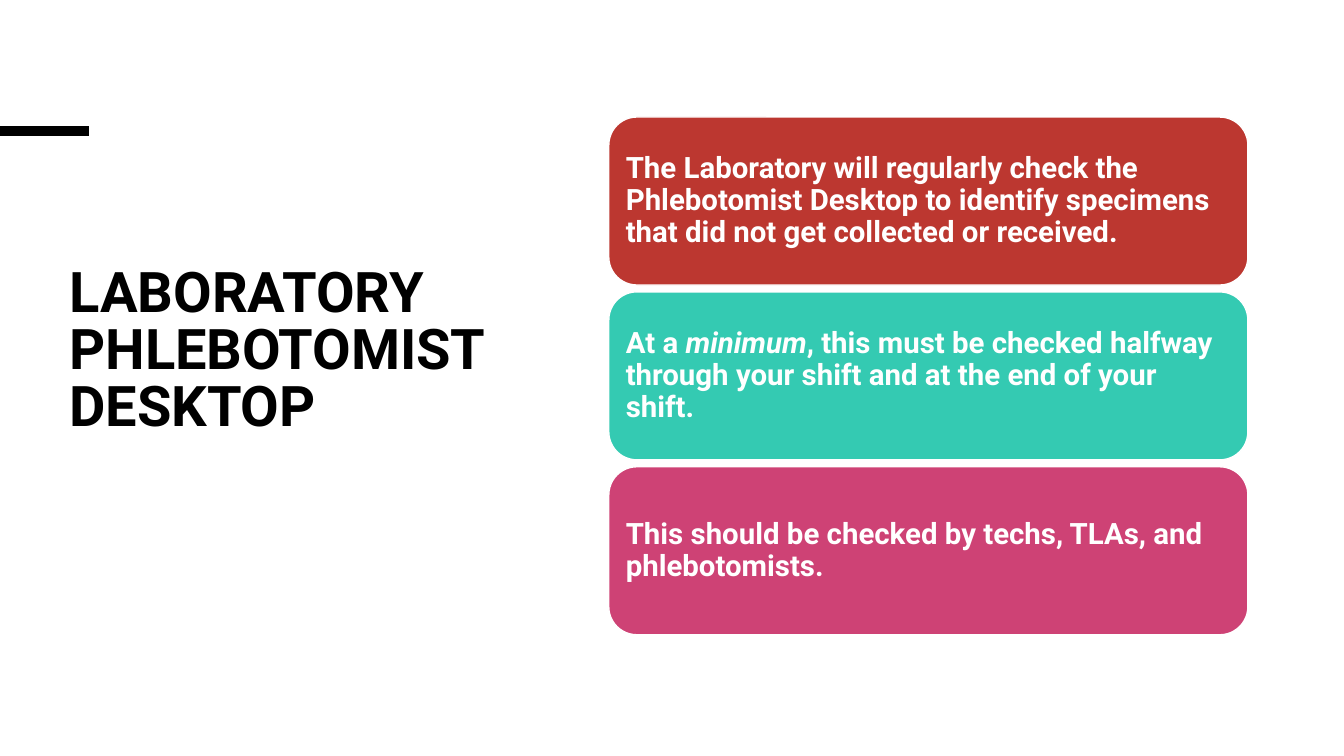
from lxml.etree import SubElement
from pptx import Presentation
from pptx.dml.color import RGBColor
from pptx.enum.shapes import MSO_CONNECTOR, MSO_SHAPE
from pptx.enum.text import MSO_ANCHOR, PP_ALIGN
from pptx.oxml.ns import qn
from pptx.util import Pt

FONT = "Roboto"
COLORS = {
    "black": "000000",
    "white": "FFFFFF",
    "red": "BC3730",
    "teal": "34CAB2",
    "pink": "CE4275",
}

# Each card: fill colour and its (text, italic) runs
CARDS = [
    ("red", [("The Laboratory will regularly check the Phlebotomist Desktop to "
              "identify specimens that did not get collected or received.", False)]),
    ("teal", [("At a ", False), ("minimum", True),
              (", this must be checked halfway through your shift and at the "
               "end of your shift.", False)]),
    ("pink", [("This should be checked by techs, TLAs, and phlebotomists.", False)]),
]
CARD_LEFT, CARD_TOP = 434.9, 83.6
CARD_WIDTH, CARD_HEIGHT, CARD_PITCH = 456.5, 120, 124.9


def rgb(name):
    return RGBColor.from_string(COLORS[name])


def style_paragraph(p, size, color, line_spacing):
    p.alignment = PP_ALIGN.LEFT
    p.line_spacing = line_spacing
    p.font.name = FONT
    p.font.size = Pt(size)
    p.font.bold = True
    p.font.color.rgb = rgb(color)


def add_accent_line(s):
    line = s.shapes.add_connector(MSO_CONNECTOR.STRAIGHT, Pt(0), Pt(93.6), Pt(63.4), Pt(93.6))
    line.line.color.rgb = rgb("black")
    line.line.width = Pt(6.75)
    SubElement(line._element.spPr, qn("a:effectLst"))


def add_title(s, text):
    tf = s.shapes.add_textbox(Pt(42.5), Pt(187.2), Pt(349.2), Pt(184.3)).text_frame
    tf.word_wrap = True
    tf.vertical_anchor = MSO_ANCHOR.TOP
    p = tf.paragraphs[0]
    p.text = text
    style_paragraph(p, 40, "black", 0.85)


def add_card(s, top, fill, runs):
    sp = s.shapes.add_shape(MSO_SHAPE.ROUNDED_RECTANGLE, Pt(CARD_LEFT), Pt(top),
                            Pt(CARD_WIDTH), Pt(CARD_HEIGHT))
    sp.shadow.inherit = False
    sp.fill.solid()
    sp.fill.fore_color.rgb = rgb(fill)
    sp.line.color.rgb = rgb("white")
    sp.line.width = Pt(1)
    tf = sp.text_frame
    tf.word_wrap = True
    tf.vertical_anchor = MSO_ANCHOR.MIDDLE
    tf.margin_left = tf.margin_right = tf.margin_top = tf.margin_bottom = Pt(6.3)
    p = tf.paragraphs[0]
    style_paragraph(p, 21, "white", 0.9)
    for text, italic in runs:
        r = p.add_run()
        r.text = text
        r.font.italic = italic


def main():
    prs = Presentation()
    prs.slide_width, prs.slide_height = Pt(960), Pt(540)
    s = prs.slides.add_slide(prs.slide_layouts[6])
    add_accent_line(s)
    add_title(s, "LABORATORY PHLEBOTOMIST DESKTOP")
    for i, (fill, runs) in enumerate(CARDS):
        add_card(s, CARD_TOP + i * CARD_PITCH, fill, runs)
    prs.save("out.pptx")


if __name__ == "__main__":
    main()
